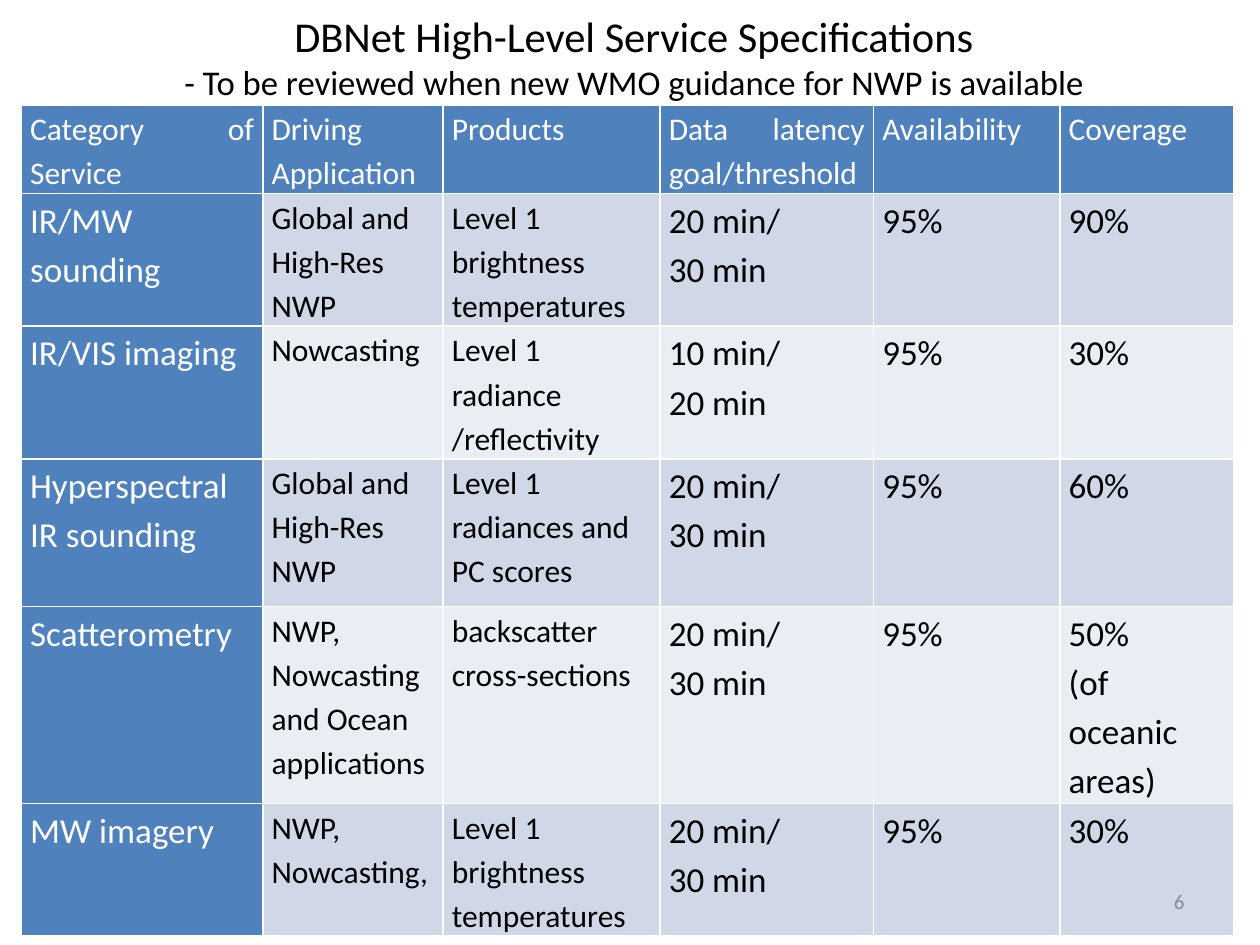
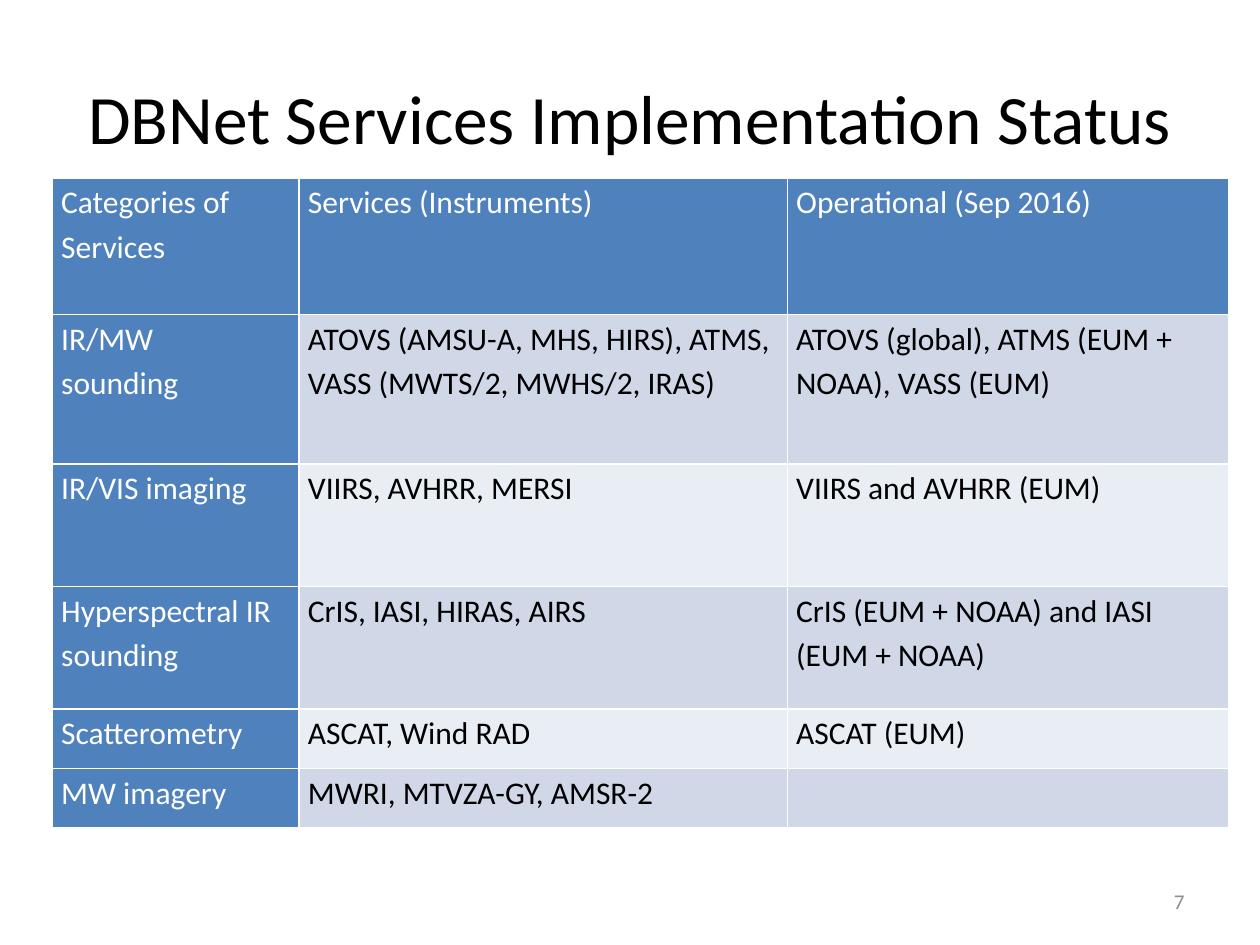
from lxml.etree import SubElement as Sub
from pptx import Presentation
from pptx.dml.color import RGBColor as Rgb
from pptx.enum.text import MSO_ANCHOR as Anchor, MSO_AUTO_SIZE as Auto, PP_ALIGN as Align
from pptx.oxml.ns import qn
from pptx.util import Pt

COLORS = {
    "head": "4F81BD",
    "odd": "D0D8E8",
    "even": "E9EDF4",
    "white": "FFFFFF",
    "black": "000000",
    "gray": "8C8C8C",
}
FONT = "Calibri"
TEXT = 18
LARGE = 20


class Deck:
    def __init__(self):
        self.prs = Presentation()
        self.prs.slide_width, self.prs.slide_height = Pt(720), Pt(540)
        self.slide = None

    def add(self):
        self.slide = self.prs.slides.add_slide(self.prs.slide_layouts[5])

    def style(self, par, size, color, align):
        par.alignment = align
        par.font.name = FONT
        par.font.size = Pt(size)
        par.font.bold = False
        par.font.color.rgb = Rgb.from_string(COLORS[color])

    def title(self, lines, left, top, width, height):
        box = self.slide.shapes.title
        box.left, box.top, box.width, box.height = map(Pt, (left, top, width, height))
        frame = box.text_frame
        frame.auto_size = Auto.NONE
        frame.vertical_anchor = Anchor.MIDDLE
        par = frame.paragraphs[0]
        self.style(par, lines[0][1], "black", Align.CENTER)
        for i, (text, size) in enumerate(lines):
            if i:
                par.add_line_break()
            run = par.add_run()
            run.text = text
            run.font.size = Pt(size)

    def number(self, text):
        box = self.slide.shapes.add_textbox(Pt(516), Pt(500.5), Pt(168), Pt(29))
        frame = box.text_frame
        frame.word_wrap = True
        frame.vertical_anchor = Anchor.MIDDLE
        par = frame.paragraphs[0]
        par.text = text
        self.style(par, 12, "gray", Align.RIGHT)

    def border(self, cell):
        props = cell._tc.get_or_add_tcPr()
        for side in ("lnL", "lnR", "lnT", "lnB"):
            line = Sub(props, qn(f"a:{side}"), w=str(Pt(1)))
            fill = Sub(line, qn("a:solidFill"))
            Sub(fill, qn("a:srgbClr"), val=COLORS["white"])

    def cell(self, cell, text, fill, size, align):
        cell.margin_left = cell.margin_right = Pt(5)
        cell.margin_top = cell.margin_bottom = 0
        self.border(cell)
        cell.fill.solid()
        cell.fill.fore_color.rgb = Rgb.from_string(COLORS[fill])
        par = cell.text_frame.paragraphs[0]
        par.text = text
        par.line_spacing = 1.15
        self.style(par, size, "white" if fill == "head" else "black", align)

    def table(self, rows, left, top, widths, heights, large=(), align=Align.LEFT):
        frame = self.slide.shapes.add_table(
            len(rows), len(widths), Pt(left), Pt(top), Pt(sum(widths)), Pt(sum(heights)))
        table = frame.table
        table.first_row = table.horz_banding = False
        for col, width in zip(table.columns, widths):
            col.width = Pt(width)
        for r, (row, height) in enumerate(zip(rows, heights)):
            table.rows[r].height = Pt(height)
            band = "odd" if r % 2 else "even"
            for c, text in enumerate(row):
                fill = "head" if r == 0 or c == 0 else band
                size = LARGE if r and c in large else TEXT
                self.cell(table.cell(r, c), text, fill, size, Align.LEFT if r else align)


SPECS = [
    ("Category of Service", "Driving Application", "Products",
     "Data latency\ngoal/threshold", "Availability", "Coverage"),
    ("IR/MW sounding", "Global and High-Res NWP", "Level 1 brightness temperatures",
     "20 min/\n30 min", "95%", "90%"),
    ("IR/VIS imaging", "Nowcasting", "Level 1 radiance /reflectivity",
     "10 min/\n20 min", "95%", "30%"),
    ("Hyperspectral IR sounding", "Global and High-Res NWP",
     "Level 1 radiances and PC scores", "20 min/\n30 min", "95%", "60%"),
    ("Scatterometry", "NWP, Nowcasting and Ocean applications",
     "backscatter cross-sections", "20 min/\n30 min", "95%", "50%\n(of\noceanic areas)"),
    ("MW imagery", "NWP, Nowcasting,", "Level 1 brightness temperatures",
     "20 min/\n30 min", "95%", "30%"),
]
STATUS = [
    ("Categories of Services", "Services (Instruments)", "Operational (Sep 2016)"),
    ("IR/MW\nsounding", "ATOVS (AMSU-A, MHS, HIRS), ATMS, VASS (MWTS/2, MWHS/2, IRAS)",
     "ATOVS (global), ATMS (EUM + NOAA), VASS (EUM)"),
    ("IR/VIS imaging", "VIIRS, AVHRR, MERSI", "VIIRS and AVHRR (EUM)"),
    ("Hyperspectral IR sounding", "CrIS, IASI, HIRAS, AIRS",
     "CrIS (EUM + NOAA) and IASI (EUM + NOAA)"),
    ("Scatterometry", "ASCAT, Wind RAD", "ASCAT (EUM)"),
    ("MW imagery", "MWRI, MTVZA-GY, AMSR-2", ""),
]


def main():
    deck = Deck()

    deck.add()
    deck.title([("DBNet High-Level Service Specifications", 24.3),
                ("- To be reviewed when new WMO guidance for NWP is available", 19.8)],
               34, 6, 656.5, 52)
    deck.table(SPECS, 12.25, 60, (138, 103, 124, 122, 106.5, 99.5),
               (50.4, 75.8, 75.8, 84.4, 112.6, 75.8), (0, 3, 4, 5), Align.JUSTIFY)
    deck.number("6")

    deck.add()
    deck.title([("DBNet Services Implementation Status", 39.6)], 36, 21.6, 648, 90)
    deck.table(STATUS, 30, 101.75, (141, 279, 252), (78, 85.5, 70, 70, 34, 34))
    deck.number("7")

    deck.prs.save("out.pptx")


if __name__ == "__main__":
    main()
